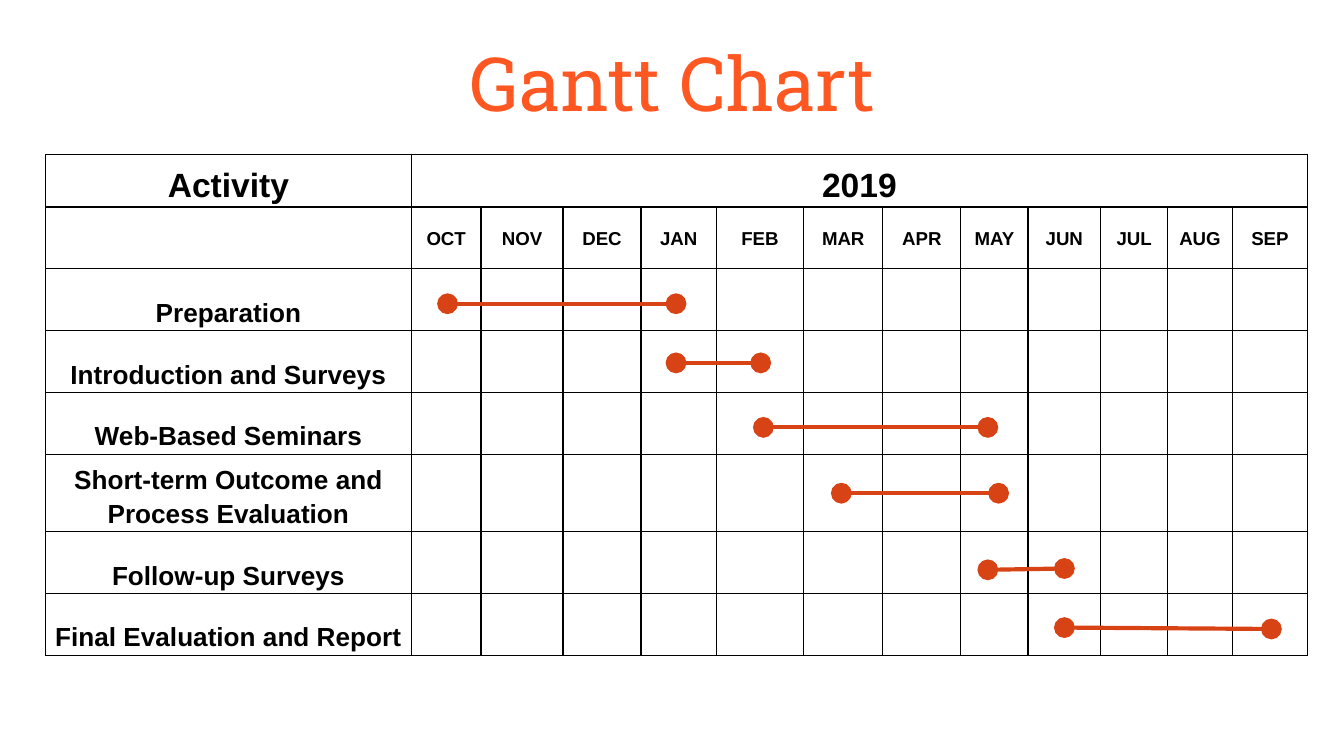
from typing import NamedTuple

from lxml.etree import SubElement
from pptx import Presentation
from pptx.dml.color import RGBColor
from pptx.enum.shapes import MSO_CONNECTOR as Link
from pptx.enum.text import MSO_ANCHOR as Anchor, PP_ALIGN as Align
from pptx.oxml.ns import qn
from pptx.util import Inches, Pt

MONTHS = "OCT NOV DEC JAN FEB MAR APR MAY JUN JUL AUG SEP".split()
WIDTHS = [2.72, 0.52, 0.61, 0.58, 0.56, 0.65, 0.59,
          0.58, 0.5, 0.54, 0.5, 0.48, 0.56]
HEIGHTS = [0.39] + [0.46] * 7


class Task(NamedTuple):
    name: str
    start: tuple[float, float]
    end: tuple[float, float]


TASKS = [
    Task("Preparation", (3.33, 2.26), (5.03, 2.26)),
    Task("Introduction and Surveys", (5.03, 2.7), (5.66, 2.7)),
    Task("Web-Based Seminars", (5.68, 3.18), (7.35, 3.18)),
    Task("Short-term Outcome and Process Evaluation", (6.26, 3.67), (7.43, 3.67)),
    Task("Follow-up Surveys", (7.35, 4.24), (7.92, 4.23)),
    Task("Final Evaluation and Report", (7.92, 4.67), (9.46, 4.68)),
]


def color(code: str) -> RGBColor:
    return RGBColor.from_string(code)


def style(frame, face: str, size: float, code: str, bold: bool = False) -> None:
    para = frame.paragraphs[0]
    para.alignment = Align.CENTER
    for run in para.runs:
        font = run.font
        font.name, font.size, font.bold = face, Pt(size), bold
        font.color.rgb = color(code)


def add_title(slide) -> None:
    box = slide.shapes.add_textbox(Inches(0.34), Inches(0.17),
                                   Inches(9.32), Inches(0.87))
    frame = box.text_frame
    frame.word_wrap = True
    frame.vertical_anchor = Anchor.MIDDLE
    frame.margin_left = frame.margin_right = Inches(0.1)
    frame.margin_top = frame.margin_bottom = Inches(0.1)
    frame.text = "Gantt Chart"
    style(frame, "Roboto Slab", 40, "FF5722")


def frame_cell(cell) -> None:
    """Set thin black borders, small margins and no fill."""
    props = cell._tc.get_or_add_tcPr()
    for side in ("lnL", "lnR", "lnT", "lnB"):
        line = SubElement(props, qn(f"a:{side}"), w=str(Pt(0.75)))
        fill = SubElement(line, qn("a:solidFill"))
        SubElement(fill, qn("a:srgbClr"), val="000000")
    cell.fill.background()
    cell.margin_left = cell.margin_right = Inches(0.03)
    cell.margin_top = cell.margin_bottom = Inches(0.02)


def write(cell, text: str, size: float, anchor=Anchor.BOTTOM) -> None:
    cell.text_frame.text = text
    cell.vertical_anchor = anchor
    cell.text_frame.paragraphs[0].line_spacing = 1.15
    style(cell.text_frame, "Arial", size, "000000", True)


def add_grid(slide) -> None:
    table = slide.shapes.add_table(
        len(HEIGHTS), len(WIDTHS), Inches(0.34), Inches(1.15),
        Inches(sum(WIDTHS)), Inches(sum(HEIGHTS))).table
    table.first_row = table.horz_banding = False
    for col, width in zip(table.columns, WIDTHS):
        col.width = Inches(width)
    for row, height in zip(table.rows, HEIGHTS):
        row.height = Inches(height)
        for cell in row.cells:
            frame_cell(cell)
    table.cell(0, 1).merge(table.cell(0, len(MONTHS)))
    write(table.cell(0, 0), "Activity", 18)
    write(table.cell(0, 1), "2019", 18)
    for col, month in enumerate(MONTHS, 1):
        write(table.cell(1, col), month, 10, Anchor.MIDDLE)
    for row, task in enumerate(TASKS, 2):
        write(table.cell(row, 0), task.name, 14)


def add_bar(slide, task: Task) -> None:
    ends = [Inches(v) for v in task.start + task.end]
    bar = slide.shapes.add_connector(Link.STRAIGHT, *ends)
    bar.line.color.rgb = color("D84315")
    bar.line.width = Pt(2.25)
    props = bar._element.spPr
    line = props.find(qn("a:ln"))
    for tip in ("headEnd", "tailEnd"):
        SubElement(line, qn(f"a:{tip}"), type="oval", w="lg", len="lg")
    SubElement(props, qn("a:effectLst"))


def main() -> None:
    deck = Presentation()
    deck.slide_width, deck.slide_height = Inches(10), Inches(10 * 9 / 16)
    slide = deck.slides.add_slide(deck.slide_layouts[6])
    add_title(slide)
    add_grid(slide)
    for task in TASKS:
        add_bar(slide, task)
    deck.save("out.pptx")


if __name__ == "__main__":
    main()
